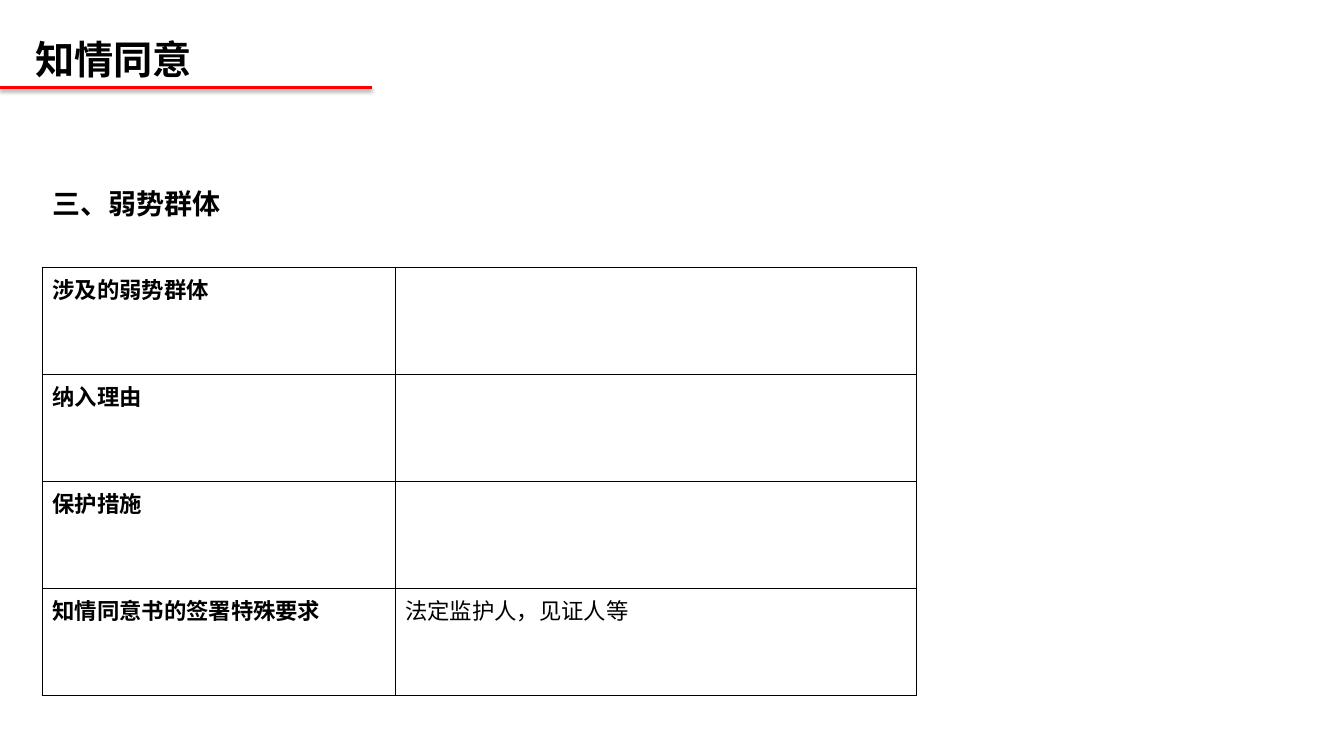
import pptx
import pptx.dml.color
import pptx.enum.shapes
import pptx.enum.text
import pptx.oxml
import pptx.oxml.ns
import pptx.util

Inches = pptx.util.Inches
Pt = pptx.util.Pt
BLACK = pptx.dml.color.RGBColor(0x00, 0x00, 0x00)
RED = pptx.dml.color.RGBColor(0xFF, 0x00, 0x00)
NS = pptx.oxml.ns.nsdecls("a")
CJK_FONT = "Noto Sans CJK SC"

HEADING = "三、弱势群体"
ROWS = [
    ("涉及的弱势群体", ""),
    ("纳入理由", ""),
    ("保护措施", ""),
    ("知情同意书的签署特殊要求", "法定监护人，见证人等"),
]


def write_text(tf, text, size=16, bold=True, font=CJK_FONT, spacing=None):
    p = tf.paragraphs[0]
    if spacing:
        p.line_spacing = spacing
    p.font.size = Pt(size)
    if text:
        r = p.add_run()
        r.text = text
        r.font.size = Pt(size)
        r.font.bold = bold
        r.font.name = font
        r.font.color.rgb = BLACK


def set_borders(cell, sides):
    tc_pr = cell._tc.get_or_add_tcPr()
    for i, side in enumerate(("L", "R", "T", "B")):
        if side in sides:
            xml = (f'<a:ln{side} {NS} w="{Pt(1)}"><a:solidFill>'
                   f'<a:srgbClr val="{BLACK}"/></a:solidFill></a:ln{side}>')
        else:
            xml = f'<a:ln{side} {NS} w="0"><a:noFill/></a:ln{side}>'
        tc_pr.insert(i, pptx.oxml.parse_xml(xml))


def add_title(s, left, top, width, height):
    sp = s.shapes.add_textbox(Inches(left), Inches(top), Inches(width), Inches(height))
    tf = sp.text_frame
    tf.word_wrap = True
    tf.vertical_anchor = pptx.enum.text.MSO_ANCHOR.BOTTOM
    write_text(tf, "知情同意", size=28, font="Times New Roman", spacing=0.9)

    y = Inches(top + height)
    rule = s.shapes.add_connector(
        pptx.enum.shapes.MSO_CONNECTOR.STRAIGHT, 0, y, Inches(3.69), y)
    rule.line.color.rgb = RED
    rule.line.width = Pt(2)
    rule._element.spPr.append(pptx.oxml.parse_xml(
        f'<a:effectLst {NS}><a:outerShdw blurRad="{Pt(3.1)}" dist="{Pt(1.6)}" '
        f'dir="5400000" rotWithShape="0"><a:srgbClr val="{BLACK}">'
        '<a:alpha val="38000"/></a:srgbClr></a:outerShdw></a:effectLst>'))


def add_group_table(s, left, top, width, height):
    frame = s.shapes.add_table(len(ROWS) + 1, 2, Inches(left), Inches(top),
                               Inches(width), Inches(height))
    table = frame.table
    table.first_row = False
    table.horz_banding = False
    label_width = 3.5
    heading_height = 0.9
    row_height = (height - heading_height) / len(ROWS)
    table.columns[0].width = Inches(label_width)
    table.columns[1].width = Inches(width - label_width)
    for i, row in enumerate(table.rows):
        row.height = Inches(row_height if i else heading_height)

    table.cell(0, 0).merge(table.cell(0, 1))
    for i, texts in enumerate([(HEADING, "")] + ROWS):
        for j, text in enumerate(texts):
            cell = table.cell(i, j)
            cell.fill.background()
            set_borders(cell, "LRTB" if i else "B")
            write_text(cell.text_frame, text, size=16 if i else 20, bold=j == 0)


def main():
    prs = pptx.Presentation()
    prs.slide_width = Inches(13.33)
    prs.slide_height = Inches(7.5)
    s = prs.slides.add_slide(prs.slide_layouts[6])
    add_title(s, 0.25, 0.33, 11.87, 0.54)
    add_group_table(s, 0.42, 1.75, 8.67, 5.15)
    prs.save("out.pptx")


if __name__ == "__main__":
    main()
